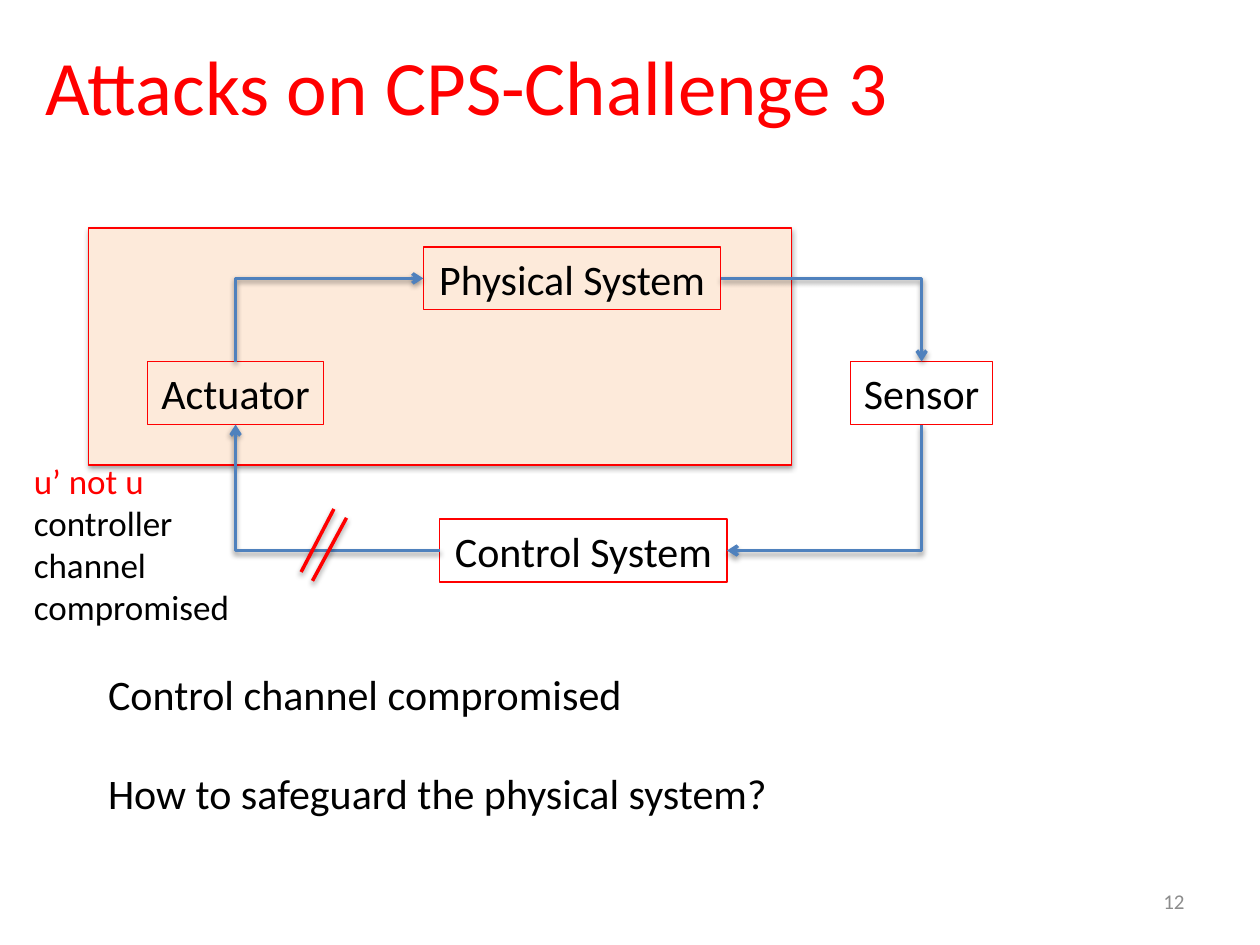
from lxml import etree
from pptx import Presentation
from pptx import util as u
from pptx.dml.color import RGBColor
from pptx.enum import shapes, text
from pptx.oxml.ns import qn

RED, BLUE, PEACH, BLACK, GRAY = "FF0000", "4F81BD", "FDEADA", "000000", "8C8C8C"
TOP, LEFT, BOTTOM, RIGHT = range(4)  # connection sites of a rectangle


def color(value):
    return RGBColor.from_string(value)


class Diagram:
    """Holds the style and the slide being drawn."""
    font = "Calibri"
    body_size = 24

    def __init__(self, slide):
        self.slide = slide

    def format(self, paragraph, size, hue, align=text.PP_ALIGN.LEFT):
        paragraph.alignment = align
        paragraph.font.name = self.font
        paragraph.font.size = u.Pt(size)
        paragraph.font.color.rgb = color(hue)

    def shadow(self, shape, alpha):
        properties = shape._element.spPr
        for old in properties.findall(qn("a:effectLst")):
            properties.remove(old)
        effects = etree.SubElement(properties, qn("a:effectLst"))
        outer = etree.SubElement(effects, qn("a:outerShdw"), blurRad="40000",
                                 dist="21600", dir="5400000", rotWithShape="0")
        shade = etree.SubElement(outer, qn("a:srgbClr"), val=BLACK)
        etree.SubElement(shade, qn("a:alpha"), val=str(alpha * 1000))

    def title(self, words, left, top, width, height):
        shape = self.slide.shapes.title
        shape.left, shape.top = u.Inches(left), u.Inches(top)
        shape.width, shape.height = u.Inches(width), u.Inches(height)
        shape.text_frame.text = words
        shape.text_frame.vertical_anchor = text.MSO_ANCHOR.MIDDLE
        self.format(shape.text_frame.paragraphs[0], 44, RED)

    def region(self, left, top, width, height):
        shape = self.slide.shapes.add_shape(
            shapes.MSO_SHAPE.RECTANGLE, u.Inches(left), u.Inches(top),
            u.Inches(width), u.Inches(height))
        shape.fill.solid()
        shape.fill.fore_color.rgb = color(PEACH)
        shape.line.color.rgb = color(RED)
        shape.line.width = u.Pt(0.75)
        self.shadow(shape, 35)

    def label(self, lines, left, top, width, height=0.5, size=body_size,
              align=text.PP_ALIGN.LEFT):
        """Place a text box; lines is a list of (words, colour)."""
        shape = self.slide.shapes.add_textbox(
            u.Inches(left), u.Inches(top), u.Inches(width), u.Inches(height))
        frame = shape.text_frame
        frame.word_wrap = False
        frame.auto_size = text.MSO_AUTO_SIZE.SHAPE_TO_FIT_TEXT
        for index, (words, hue) in enumerate(lines):
            paragraph = frame.add_paragraph() if index else frame.paragraphs[0]
            paragraph.text = words
            self.format(paragraph, size, hue, align)
        return shape

    def block(self, words, left, top, width):
        shape = self.label([(words, BLACK)], left, top, width,
                           align=text.PP_ALIGN.CENTER)
        shape.line.color.rgb = color(RED)
        shape.line.width = u.Pt(0.75)
        return shape

    def stroke(self, connector, hue):
        connector.line.color.rgb = color(hue)
        connector.line.width = u.Pt(2)
        self.shadow(connector, 38)

    def elbow(self, beside, side, above, edge, arrow_end):
        """Join a side of one block to the top or bottom of another."""
        connector = self.slide.shapes.add_connector(
            shapes.MSO_CONNECTOR.ELBOW, 0, 0, 0, 0)
        connector.begin_connect(beside, side)
        connector.end_connect(above, edge)
        connector._element.spPr.find(qn("a:prstGeom")).set("prst", "bentConnector2")
        self.stroke(connector, BLUE)
        etree.SubElement(connector.line._get_or_add_ln(), qn(f"a:{arrow_end}"),
                         type="arrow")

    def slash(self, x1, y1, x2, y2):
        connector = self.slide.shapes.add_connector(
            shapes.MSO_CONNECTOR.STRAIGHT, u.Inches(x1), u.Inches(y1),
            u.Inches(x2), u.Inches(y2))
        self.stroke(connector, RED)

    def page_number(self, number):
        shape = self.label([(number, GRAY)], 7.17, 6.95, 2.33, 0.4, 12,
                           text.PP_ALIGN.RIGHT)
        shape.text_frame.word_wrap = True
        shape.text_frame.auto_size = text.MSO_AUTO_SIZE.NONE
        shape.text_frame.vertical_anchor = text.MSO_ANCHOR.MIDDLE


def main():
    presentation = Presentation()
    presentation.slide_width, presentation.slide_height = u.Inches(10), u.Inches(7.5)
    diagram = Diagram(presentation.slides.add_slide(presentation.slide_layouts[5]))

    # Title and shaded physical side
    diagram.title("Attacks on CPS-Challenge 3", 0.26, 0.17, 7.85, 1.01)
    diagram.region(0.7, 1.81, 5.58, 1.88)

    # Questions below the loop
    diagram.label([("Control channel compromised", BLACK)], 0.76, 5.26, 4.33)
    diagram.label([("How to safeguard the physical system?", BLACK)], 0.76, 6.04, 5.53)

    # Control loop
    physical = diagram.block("Physical System", 3.36, 1.96, 2.36)
    sensor = diagram.block("Sensor", 6.75, 2.87, 1.13)
    control = diagram.block("Control System", 3.49, 4.12, 2.28)
    actuator = diagram.block("Actuator", 1.17, 2.87, 1.4)
    diagram.elbow(control, RIGHT, sensor, BOTTOM, "headEnd")
    diagram.elbow(physical, RIGHT, sensor, TOP, "tailEnd")
    diagram.elbow(control, LEFT, actuator, BOTTOM, "tailEnd")
    diagram.elbow(physical, LEFT, actuator, TOP, "headEnd")

    # Compromised channel: note and double slash
    diagram.label([("u’ not u", RED), ("controller", BLACK),
                   ("channel\vcompromised", BLACK)], 0.17, 3.6, 1.77, 1.45, 20)
    diagram.slash(2.65, 4.04, 2.39, 4.54)
    diagram.slash(2.75, 4.11, 2.48, 4.61)

    diagram.page_number("12")
    presentation.save("out.pptx")


if __name__ == "__main__":
    main()
